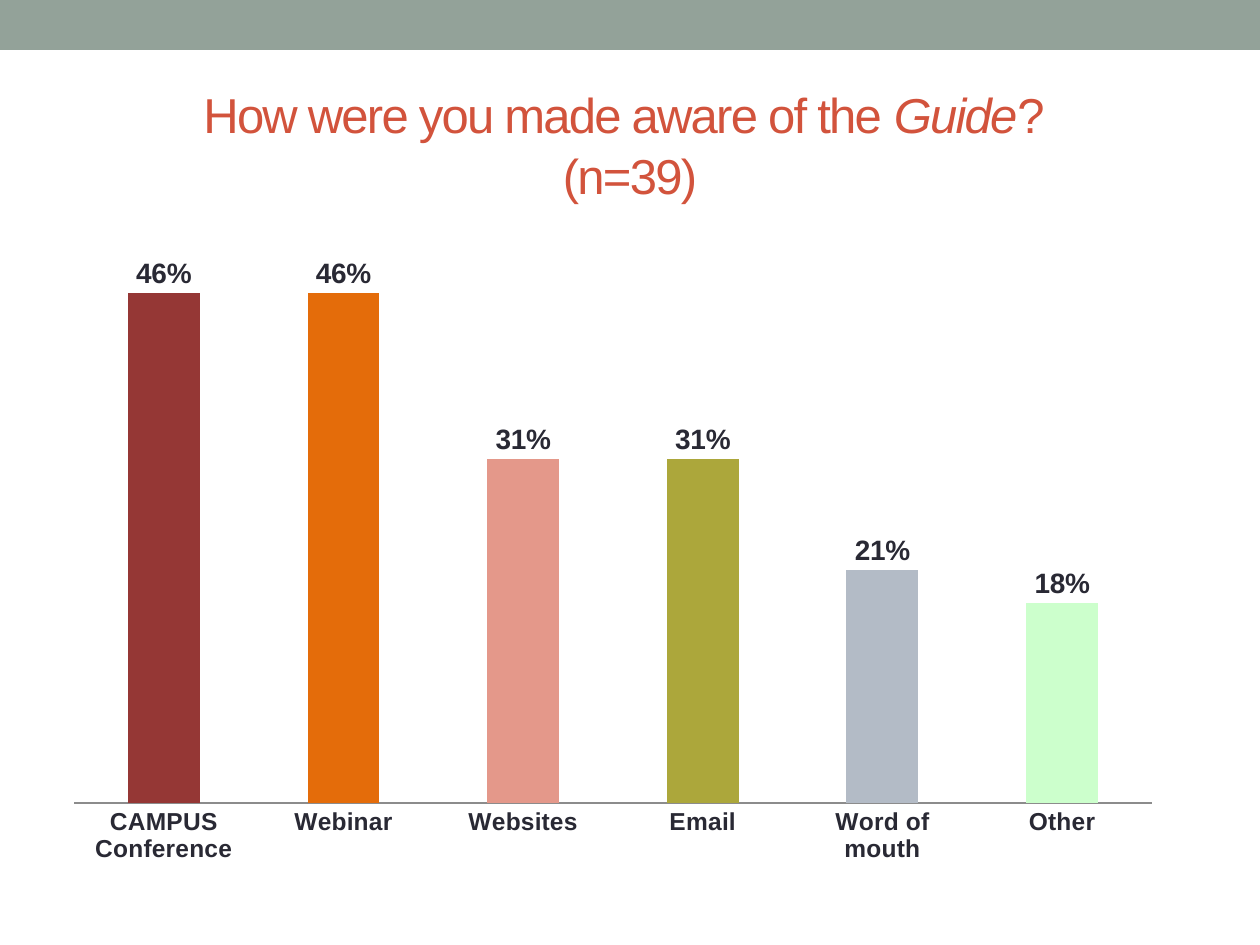
"""Build the slide on how respondents heard about the Guide."""
from lxml import etree
from pptx import Presentation
from pptx import util as u
from pptx.chart import data as chart_data
from pptx.dml.color import RGBColor
from pptx.enum import chart as charts, shapes, text
from pptx.oxml.ns import qn

FONT = "Arial"
DARK = "292934"
SAGE = "93A299"
CHART_BOX = (54, 249, 1120, 640)
PLOT_BOX = (20, 0, 1078, 554)
ANSWERS = [
    ("CAMPUS Conference", 0.46, "953735"),
    ("Webinar", 0.46, "E46C0A"),
    ("Websites", 0.31, "E4988A"),
    ("Email", 0.31, "ACA73B"),
    ("Word of mouth", 0.21, "B3BBC6"),
    ("Other", 0.18, "CCFFCC"),
]


def px(length):
    """Turn pixels into EMU at 126 pixels to the inch."""
    return round(length * u.Inches(1) / 126)


def color(value):
    """Turn a hex string into a colour."""
    return RGBColor.from_string(value)


def paint(fill, value):
    """Give a fill one solid colour."""
    fill.solid()
    fill.fore_color.rgb = color(value)


def style_font(font, size, value, bold=False):
    """Set the face, size, colour and weight of a font."""
    font.name = FONT
    font.size = u.Pt(size)
    font.bold = bold
    font.color.rgb = color(value)


def add_band(slide, box):
    """Add the plain band along the top edge."""
    band = slide.shapes.add_shape(shapes.MSO_SHAPE.RECTANGLE, *map(px, box))
    band.shadow.inherit = False
    paint(band.fill, SAGE)
    band.line.fill.background()


def fill_title(title, box):
    """Place the title and write its two lines."""
    title.left, title.top, title.width, title.height = map(px, box)
    frame = title.text_frame
    frame.word_wrap = True
    frame.auto_size = text.MSO_AUTO_SIZE.NONE
    frame.vertical_anchor = text.MSO_ANCHOR.MIDDLE
    paragraph = frame.paragraphs[0]
    paragraph.alignment = text.PP_ALIGN.CENTER
    paragraph.line_spacing = 1.05
    style_font(paragraph.font, 28, "D2533C")
    for words, italic in (("How were you made aware of the ", False), ("Guide", True), ("? ", False)):
        run = paragraph.add_run()
        run.text = words
        run.font.italic = italic
    paragraph.add_line_break()
    paragraph.add_run().text = "(n=39)"
    for run in paragraph.runs:
        run.font._element.set("spc", "-100")


def set_plot_layout(chart, box, frame):
    """Fix the inner plot area as fractions of the chart frame."""
    plot_area = chart._chartSpace.chart.plotArea
    layout = plot_area.find(qn("c:layout"))
    if layout is None:
        layout = etree.Element(qn("c:layout"))
        plot_area.insert(0, layout)
    manual = etree.SubElement(layout, qn("c:manualLayout"))
    settings = [("layoutTarget", "inner"), ("xMode", "edge"), ("yMode", "edge")]
    sizes = (frame[2], frame[3]) * 2
    settings += [(name, str(part / size)) for name, part, size in zip("xywh", box, sizes)]
    for name, value in settings:
        etree.SubElement(manual, qn(f"c:{name}")).set("val", value)


def style_axes(chart):
    """Show only the category axis, and scale the hidden value axis."""
    value_axis = chart.value_axis
    value_axis.visible = False
    value_axis.has_major_gridlines = False
    value_axis.minimum_scale, value_axis.maximum_scale = 0, 0.5
    category_axis = chart.category_axis
    category_axis.major_tick_mark = charts.XL_TICK_MARK.NONE
    category_axis.format.line.width = u.Pt(0.75)
    category_axis.format.line.color.rgb = color("8C8C8C")
    style_font(category_axis.tick_labels.font, 14, DARK, bold=True)


def add_answer_chart(slide):
    """Add the column chart with one colour for each answer."""
    data = chart_data.CategoryChartData(number_format="0%")
    names, shares, fills = zip(*ANSWERS)
    data.categories = names
    data.add_series("Series 1", shares)
    chart = slide.shapes.add_chart(
        charts.XL_CHART_TYPE.COLUMN_CLUSTERED, *map(px, CHART_BOX), data
    ).chart
    chart.has_legend = False
    chart.has_title = False
    style_font(chart.font, 10, DARK)
    style_axes(chart)
    set_plot_layout(chart, PLOT_BOX, CHART_BOX)
    plot = chart.plots[0]
    plot.gap_width, plot.overlap = 150, -25
    plot.vary_by_categories = False
    series = plot.series[0]
    paint(series.format.fill, SAGE)
    for index, value in enumerate(fills):
        paint(series.points[index].format.fill, value)
    labels = series.data_labels
    labels.show_value = True
    labels.number_format = "0%"
    labels.number_format_is_linked = False
    labels.position = charts.XL_LABEL_POSITION.OUTSIDE_END
    style_font(labels.font, 16, DARK, bold=True)


def main():
    """Build and save the slide."""
    presentation = Presentation()
    presentation.slide_width, presentation.slide_height = px(1260), px(945)
    slide = presentation.slides.add_slide(presentation.slide_layouts[5])
    add_band(slide, (0, 0, 1260, 50))
    fill_title(slide.shapes.title, (63, 75, 1134, 136))
    add_answer_chart(slide)
    presentation.save("out.pptx")


if __name__ == "__main__":
    main()
